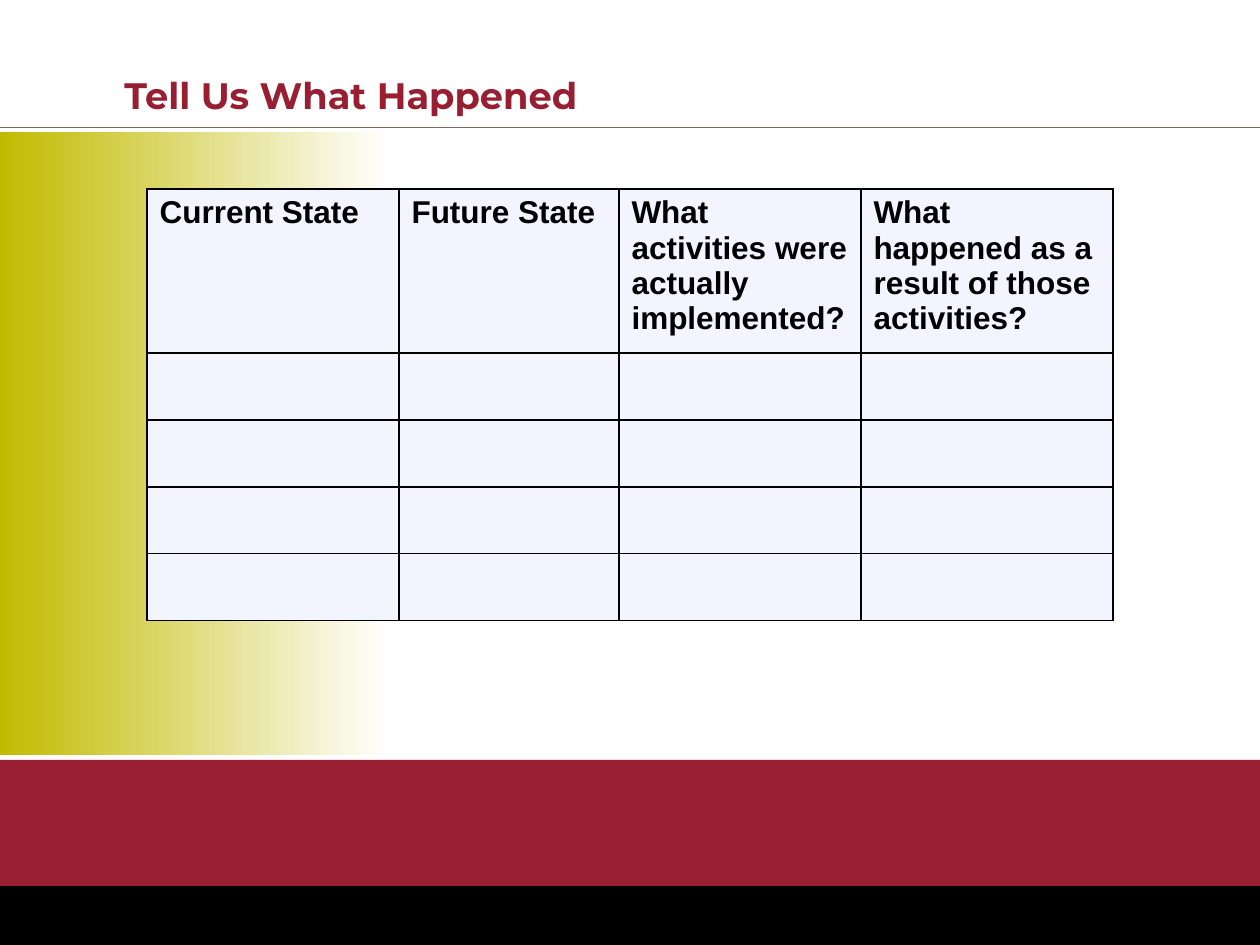
from lxml import etree
from pptx import Presentation
from pptx import util as u
from pptx.dml.color import RGBColor
from pptx.enum import shapes, text
from pptx.oxml.ns import qn

SCALE = 914400 / 126
COLORS = {"gold": "C1BB00", "white": "FFFFFF", "crimson": "981E32",
          "black": "000000", "rule": "7C6A55", "cell": "F2F5FF"}
HEADERS = ["Current State", "Future State",
           "What activities were actually implemented?",
           "What happened as a result of those activities?"]
COL_WIDTHS = [252, 220, 242, 252]
ROW_HEIGHT = 67
ROW_COUNT = 5


def px(n):
    return u.Emu(round(n * SCALE))


def rgb(name):
    return RGBColor.from_string(COLORS[name])


class Deck:
    """Holds the style and the current slide."""

    def __init__(self, width, height):
        self.prs = Presentation()
        self.prs.slide_width, self.prs.slide_height = px(width), px(height)
        self.s = self.prs.slides.add_slide(self.prs.slide_layouts[6])

    def band(self, x, y, w, h, color, fade_to=None):
        """Rectangle, plain or fading from left to right."""
        sp = self.s.shapes.add_shape(shapes.MSO_SHAPE.RECTANGLE,
                                     px(x), px(y), px(w), px(h))
        sp.shadow.inherit = False
        sp.line.fill.background()
        if fade_to:
            sp.fill.gradient()
            sp.fill.gradient_angle = 0
            for stop, name in zip(sp.fill.gradient_stops, (color, fade_to)):
                stop.color.rgb = rgb(name)
        else:
            sp.fill.solid()
            sp.fill.fore_color.rgb = rgb(color)

    def rule(self, x1, y1, x2, y2, color, width):
        line = self.s.shapes.add_connector(shapes.MSO_CONNECTOR.STRAIGHT,
                                           px(x1), px(y1), px(x2), px(y2))
        line.line.color.rgb = rgb(color)
        line.line.width = u.Pt(width)
        etree.SubElement(line._element.spPr, qn("a:effectLst"))

    def style(self, p, font, size, color):
        p.font.name, p.font.size, p.font.bold = font, u.Pt(size), True
        p.font.color.rgb = rgb(color)

    def title(self, x, y, w, h, words):
        tf = self.s.shapes.add_textbox(px(x), px(y), px(w), px(h)).text_frame
        tf.word_wrap = True
        tf.vertical_anchor = text.MSO_ANCHOR.BOTTOM
        p = tf.paragraphs[0]
        p.text = words
        p.line_spacing = 0.8
        self.style(p, "Montserrat", 21, "crimson")

    def border(self, cell, color, width):
        tc_pr = cell._tc.get_or_add_tcPr()
        for i, side in enumerate(("lnL", "lnR", "lnT", "lnB")):
            ln = etree.Element(qn(f"a:{side}"), w=str(u.Pt(width)))
            fill = etree.SubElement(ln, qn("a:solidFill"))
            etree.SubElement(fill, qn("a:srgbClr"), val=COLORS[color])
            tc_pr.insert(i, ln)

    def table(self, x, y, headers, widths, row_count, row_height):
        frame = self.s.shapes.add_table(row_count, len(widths), px(x), px(y),
                                        px(sum(widths)), px(row_count * row_height))
        table = frame.table
        table.first_row = table.horz_banding = False
        for col, width in zip(table.columns, widths):
            col.width = px(width)
        for row in table.rows:
            row.height = px(row_height)
        for cell in table.iter_cells():
            cell.fill.solid()
            cell.fill.fore_color.rgb = rgb("cell")
            self.border(cell, "black", 1)
        for cell, words in zip(table.rows[0].cells, headers):
            cell.text = words
            self.style(cell.text_frame.paragraphs[0], "Arial", 18, "black")


def main():
    deck = Deck(1260, 945)
    deck.band(0, 132, 388, 623, "gold", fade_to="white")
    deck.band(0, 760, 1260, 126, "crimson")
    deck.band(0, 886, 1260, 59, "black")
    deck.rule(0, 127, 1260, 127, "rule", 0.5)
    deck.title(112, 30, 811, 93, "Tell Us What Happened")
    deck.table(147, 189, HEADERS, COL_WIDTHS, ROW_COUNT, ROW_HEIGHT)
    deck.prs.save("out.pptx")


if __name__ == "__main__":
    main()
